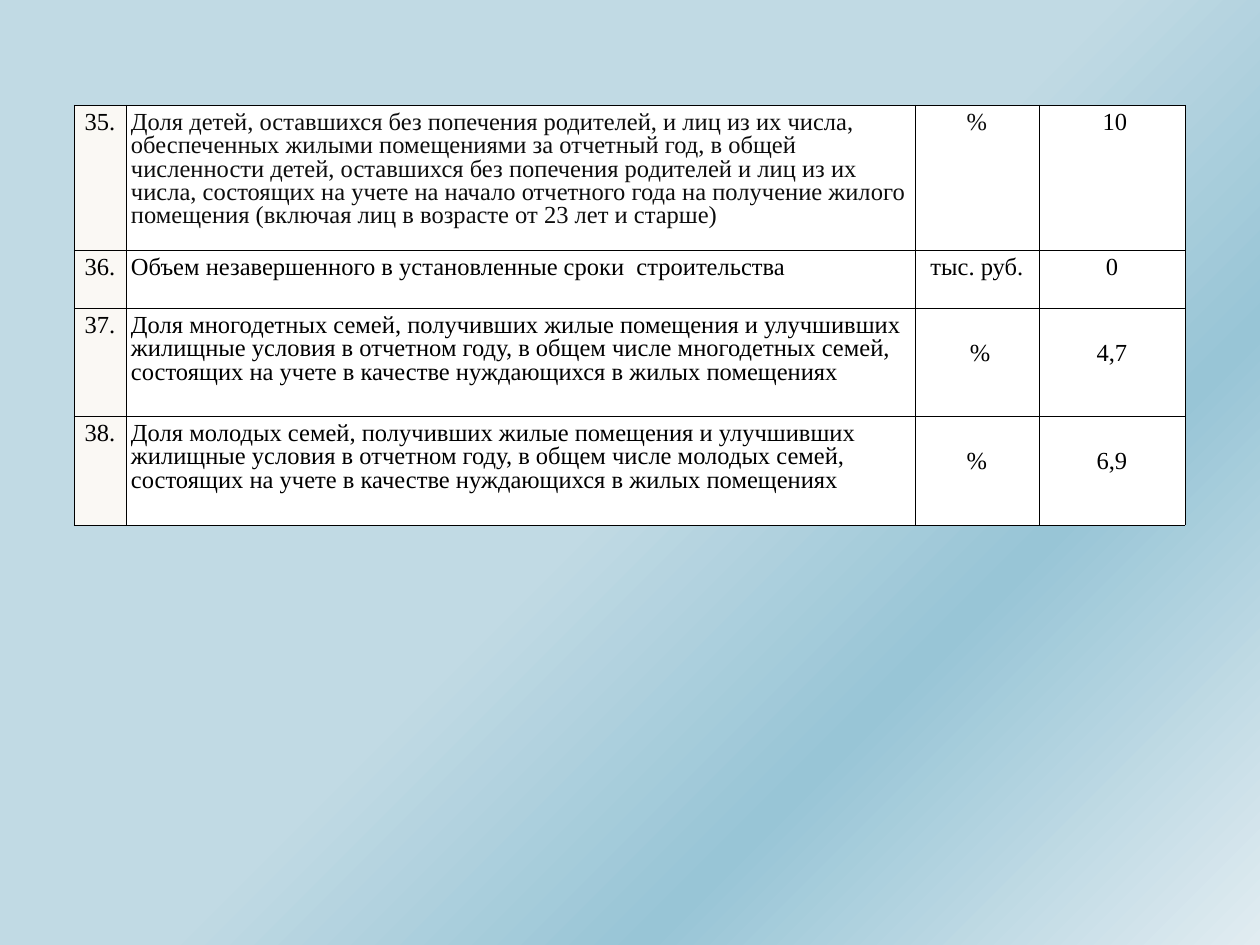
from copy import deepcopy
from dataclasses import dataclass

from lxml.etree import SubElement
from pptx import Presentation
from pptx.dml.color import RGBColor as Color
from pptx.enum.text import PP_ALIGN as Align
from pptx.oxml.ns import qn
from pptx.util import Emu, Pt


@dataclass(frozen=True)
class Theme:
    font: str = "Times New Roman"
    size: float = 14
    line_spacing: float = 0.86
    ink: str = "000000"
    soft_ink: str = "0D0D0D"
    number_fill: str = "FAF8F4"
    cell_fill: str = "FFFFFF"
    border: str = "000000"
    border_width: float = 0.11
    backdrop: tuple = ((0.5, "C1DAE4"), (0.72, "98C5D6"), (1, "E1ECF1"))


THEME = Theme()
EMU_PER_PX = 914400 / 126

COLUMN_WIDTHS = (52, 789, 124, 146)
ROW_HEIGHTS = (145, 58, 108, 109)
TOP_INSET = 7
LOWERED_INSET = 35  # values set one line lower

# Number, indicator, unit, value, top inset of unit and value
INDICATORS = (
    ("35.", "Доля детей, оставшихся без попечения родителей, и лиц из их числа, "
     "обеспеченных жилыми помещениями за отчетный год, в общей численности детей, "
     "оставшихся без попечения родителей и лиц из их числа, состоящих на учете "
     "на начало отчетного года на получение жилого помещения "
     "(включая лиц в возрасте от 23 лет и старше)", "%", " 10", TOP_INSET),
    ("36.", "Объем незавершенного в установленные сроки  строительства",
     "тыс. руб.", "0", TOP_INSET),
    ("37.", "Доля многодетных семей, получивших жилые помещения и улучшивших "
     "жилищные условия в отчетном году, в общем числе многодетных семей, "
     "состоящих на учете в качестве нуждающихся в жилых помещениях",
     " %", "4,7", LOWERED_INSET),
    ("38.", "Доля молодых семей, получивших жилые помещения и улучшивших "
     "жилищные условия в отчетном году, в общем числе молодых семей, "
     "состоящих на учете в качестве нуждающихся в жилых помещениях",
     "%", "6,9", LOWERED_INSET),
)


def px(length):
    return Emu(round(length * EMU_PER_PX))


def paint_background(page):
    fill = page.background.fill
    fill.gradient()
    fill.gradient_angle = 315  # counter-clockwise: runs to the lower right
    first = fill.gradient_stops[0]._gs
    first.addnext(deepcopy(first))
    for stop, (position, color) in zip(fill.gradient_stops, THEME.backdrop):
        stop.position = position
        stop.color.rgb = Color.from_string(color)


def add_borders(cell):
    properties = cell._tc.get_or_add_tcPr()
    for side in ("lnL", "lnR", "lnT", "lnB"):
        line = SubElement(properties, qn(f"a:{side}"), w=str(Pt(THEME.border_width)))
        solid = SubElement(line, qn("a:solidFill"))
        SubElement(solid, qn("a:srgbClr"), val=THEME.border)


def fill_cell(cell, text, fill, ink, align, top_inset):
    add_borders(cell)
    cell.fill.solid()
    cell.fill.fore_color.rgb = Color.from_string(fill)
    cell.margin_left = cell.margin_right = px(5)
    cell.margin_top, cell.margin_bottom = px(top_inset), 0
    cell.text = text
    para = cell.text_frame.paragraphs[0]
    para.alignment = align
    para.line_spacing = THEME.line_spacing
    para.font.name = THEME.font
    para.font.size = Pt(THEME.size)
    para.font.color.rgb = Color.from_string(ink)


def add_indicator_table(page):
    frame = page.shapes.add_table(
        len(ROW_HEIGHTS), len(COLUMN_WIDTHS), px(74), px(105),
        px(sum(COLUMN_WIDTHS)), px(sum(ROW_HEIGHTS)))
    table = frame.table
    table.first_row = table.horz_banding = False
    for column, width in zip(table.columns, COLUMN_WIDTHS):
        column.width = px(width)
    for row, height in zip(table.rows, ROW_HEIGHTS):
        row.height = px(height)

    for row_index, (*texts, value_inset) in enumerate(INDICATORS):
        for column_index, text in enumerate(texts):
            softened = row_index == 0 and column_index in (1, 2)
            fill_cell(
                table.cell(row_index, column_index), text,
                fill=THEME.cell_fill if column_index else THEME.number_fill,
                ink=THEME.soft_ink if softened else THEME.ink,
                align=Align.LEFT if column_index == 1 else Align.CENTER,
                top_inset=value_inset if column_index > 1 else TOP_INSET)


def main():
    deck = Presentation()
    deck.slide_width, deck.slide_height = px(1260), px(945)
    page = deck.slides.add_slide(deck.slide_layouts[6])  # blank layout
    paint_background(page)
    add_indicator_table(page)
    deck.save("out.pptx")


if __name__ == "__main__":
    main()
